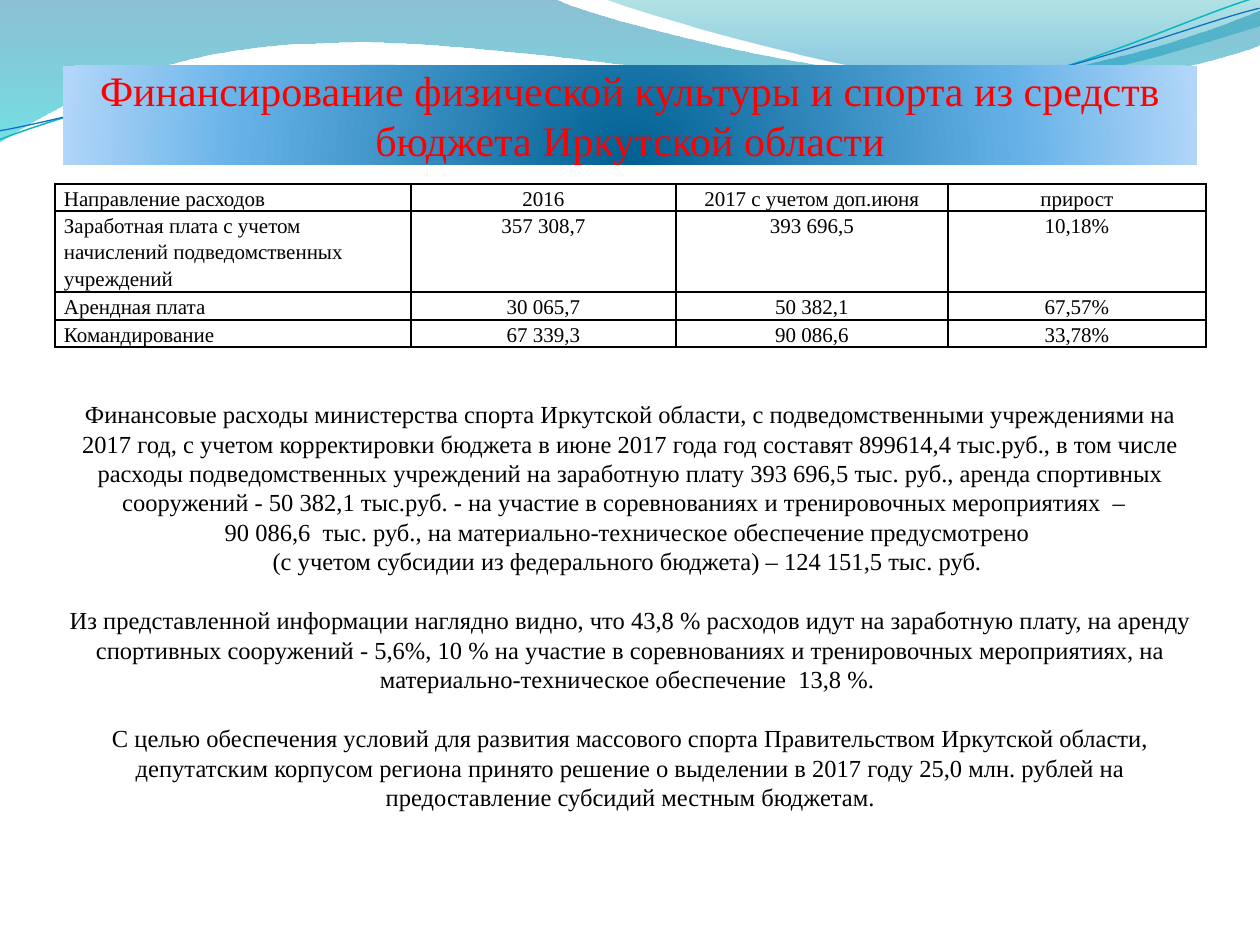
"""Build the slide on sports funding in the Irkutsk region budget."""
from lxml import etree
from pptx import Presentation
from pptx.dml.color import RGBColor
from pptx.enum.shapes import MSO_SHAPE
from pptx.enum.text import MSO_ANCHOR, MSO_AUTO_SIZE, PP_ALIGN
from pptx.oxml import parse_xml
from pptx.oxml.ns import nsdecls, qn
from pptx.util import Pt

PX = 7257
LEFT, CENTER = PP_ALIGN.LEFT, PP_ALIGN.CENTER
TOP, BOTTOM = MSO_ANCHOR.TOP, MSO_ANCHOR.BOTTOM
GROW = MSO_AUTO_SIZE.SHAPE_TO_FIT_TEXT
RECTANGLE = MSO_SHAPE.RECTANGLE
FONT = "Times New Roman"
COLORS = {
    "text": "000000", "title": "FF0000", "border": "000000",
    "wave_top": "0074A1", "wave_bottom": "00C6CF",
    "crest_top": "00A1A9", "crest_bottom": "008BBF",
    "teal_line": "0AB8BF", "blue_line": "0F6FC6",
    "banner_core": "006091", "banner_mid": "64B1E7", "banner_edge": "B1D6F9",
}
LINEAR = '<a:lin ang="5400000" scaled="0"/>'
RADIAL = ('<a:path path="circle"><a:fillToRect l="50000" t="130000" '
          'r="50000" b="-30000"/></a:path>')

WAVE = [(0, 0), (554, -1), (600, 21, 837, 79, 955, 79), (1075, 79, 1207, 33, 1260, 11),
        (1261, 45), (1239, 55, 1096, 96, 940, 95), (784, 95, 481, 35, 324, 43),
        (163, 45, 58, 105, -1, 142)]
CREST = [(604, -1), (641, 14, 859, 78, 969, 82), (1079, 87, 1211, 40, 1260, 26), (1260, 0)]
TEAL_CURVE = [(-3, 110), (58, 90, 199, 52, 349, 53), (498, 53, 745, 118, 896, 114),
              (1048, 109, 1184, 45, 1260, 27)]
BLUE_CURVE = [(-2, 101), (58, 94, 207, 57, 358, 58), (509, 58, 750, 112, 902, 108),
              (1052, 104, 1188, 52, 1262, 38)]
CURVE_TILT = 357.3

TITLE = "Финансирование физической культуры и спорта из средств бюджета Иркутской области"
EXPENSES = [
    ["Направление расходов", "2016", "2017 с учетом доп.июня", "прирост"],
    ["Заработная плата с учетом начислений подведомственных учреждений",
     "357 308,7", "393 696,5", "10,18%"],
    ["Арендная плата", "30 065,7", "50 382,1", "67,57%"],
    ["Командирование", "67 339,3", "90 086,6", "33,78%"],
]
COLUMN_WIDTHS = [356, 265, 272, 258]
ROW_HEIGHTS = [27, 81, 28, 27]
SUMMARY = [
    "Финансовые расходы министерства спорта Иркутской области, с подведомственными "
    "учреждениями на 2017 год, с учетом корректировки бюджета в июне 2017 года год составят "
    "899614,4 тыс.руб., в том числе расходы подведомственных учреждений на заработную плату "
    "393 696,5 тыс. руб., аренда спортивных сооружений - 50 382,1 тыс.руб. - на участие в "
    "соревнованиях и тренировочных мероприятиях  –  ",
    "90 086,6  тыс. руб., на материально-техническое обеспечение предусмотрено ",
    "(с учетом субсидии из федерального бюджета) – 124 151,5 тыс. руб. ",
    "Из представленной информации наглядно видно, что 43,8 % расходов идут на заработную "
    "плату, на аренду спортивных сооружений - 5,6%, 10 % на участие в соревнованиях и "
    "тренировочных мероприятиях, на материально-техническое обеспечение  13,8 %. ",
    "С целью обеспечения условий для развития массового спорта Правительством Иркутской "
    "области, депутатским корпусом региона принято решение о выделении в 2017 году 25,0 млн. "
    "рублей на предоставление субсидий местным бюджетам.",
]
SECTION_STARTS = SUMMARY[3:]


def write(paragraph, text, *, size, color="text", align=CENTER, spacing=1.0, before=0):
    """Put formatted text into a paragraph."""
    paragraph.alignment, paragraph.line_spacing = align, spacing
    paragraph.space_before = Pt(before)
    run = paragraph.add_run()
    run.text = text
    run.font.name, run.font.size = FONT, Pt(size)
    run.font.color.rgb = RGBColor.from_string(COLORS[color])


class SlideBuilder:
    """Hold the slide and draw each kind of element in its style."""

    def __init__(self, slide):
        self.slide = slide
        self.shapes = slide.shapes

    def box(self, *lengths):
        """Scale px lengths to EMU."""
        return [length * PX for length in lengths]

    def gradient(self, shape, stops, direction):
        """Fill a shape with (position, color, opacity) stops."""
        marks = "".join(
            f'<a:gs pos="{pos * 1000}"><a:srgbClr val="{COLORS[color]}">'
            f'<a:alpha val="{opacity * 1000}"/></a:srgbClr></a:gs>'
            for pos, color, opacity in stops)
        shape.fill.background()
        blank = shape._element.spPr.find(qn("a:noFill"))
        blank.getparent().replace(blank, parse_xml(
            f'<a:gradFill {nsdecls("a")} rotWithShape="1"><a:gsLst>{marks}</a:gsLst>'
            f'{direction}</a:gradFill>'))
        shape.line.fill.background()

    def outline(self, steps, closed):
        """Draw a freeform whose six-number steps are cubic curves."""
        points = [step[i:i + 2] for step in steps for i in range(0, len(step), 2)]
        builder = self.shapes.build_freeform(*points[0], scale=PX)
        builder.add_line_segments(points[1:], close=closed)
        shape = builder.convert_to_shape()
        shape.shadow.inherit = False
        segments = iter(list(shape._element.iter(qn("a:lnTo"))))
        for step in steps[1:]:
            first = next(segments)
            if len(step) == 6:
                first.tag = qn("a:cubicBezTo")
                for _ in range(2):
                    control = next(segments)
                    first.append(control[0])
                    control.getparent().remove(control)
        return shape

    def wave(self, steps, stops):
        """Draw a closed translucent wave."""
        self.gradient(self.outline(steps, True), stops, LINEAR)

    def curve(self, steps, color, width):
        """Draw an open tilted curve."""
        shape = self.outline(steps, False)
        shape.rotation = CURVE_TILT
        shape.fill.background()
        shape.line.color.rgb = RGBColor.from_string(COLORS[color])
        shape.line.width = Pt(width)

    def banner(self, text, *lengths):
        """Draw the title band."""
        band = self.shapes.add_shape(RECTANGLE, *self.box(*lengths))
        band.shadow.inherit = False
        self.gradient(band, [(0, "banner_core", 100), (68, "banner_mid", 100),
                             (100, "banner_edge", 100)], RADIAL)
        frame = band.text_frame
        frame.word_wrap, frame.vertical_anchor = True, BOTTOM
        frame.margin_left = frame.margin_right = frame.margin_bottom = 0
        write(frame.paragraphs[0], text, size=24, color="title")

    def table(self, rows, left, top):
        """Draw the bordered expense table."""
        table = self.shapes.add_table(
            len(rows), len(rows[0]),
            *self.box(left, top, sum(COLUMN_WIDTHS), sum(ROW_HEIGHTS))).table
        table.first_row = table.horz_banding = False
        for column, width in zip(table.columns, COLUMN_WIDTHS):
            column.width = width * PX
        for row, height, texts in zip(table.rows, ROW_HEIGHTS, rows):
            row.height = height * PX
            for index, (cell, text) in enumerate(zip(row.cells, texts)):
                cell.margin_left = cell.margin_right = 9 * PX
                cell.margin_top = cell.margin_bottom = 0
                cell.vertical_anchor = TOP
                write(cell.text_frame.paragraphs[0], text, size=12, spacing=1.15,
                      align=CENTER if index else LEFT)
                self.borders(cell)
                cell.fill.background()

    def borders(self, cell):
        """Rule all four sides of a cell."""
        properties = cell._tc.get_or_add_tcPr()
        for side in ("a:lnL", "a:lnR", "a:lnT", "a:lnB"):
            line = etree.SubElement(properties, qn(side), w=str(Pt(1)))
            fill = etree.SubElement(line, qn("a:solidFill"))
            etree.SubElement(fill, qn("a:srgbClr"), val=COLORS["border"])

    def prose(self, texts, *lengths):
        """Draw the centred paragraphs."""
        frame = self.shapes.add_textbox(*self.box(*lengths)).text_frame
        frame.word_wrap, frame.auto_size = True, GROW
        for index, text in enumerate(texts):
            paragraph = frame.add_paragraph() if index else frame.paragraphs[0]
            write(paragraph, text, size=14, before=17 if text in SECTION_STARTS else 0)


def main():
    """Compose and save the slide."""
    deck = Presentation()
    deck.slide_width, deck.slide_height = 1260 * PX, 945 * PX
    page = SlideBuilder(deck.slides.add_slide(deck.slide_layouts[6]))
    page.wave(WAVE, [(0, "wave_top", 45), (100, "wave_bottom", 55)])
    page.wave(CREST, [(0, "crest_top", 30), (80, "crest_bottom", 45)])
    page.curve(TEAL_CURVE, "teal_line", 0.85)
    page.curve(BLUE_CURVE, "blue_line", 0.75)
    page.banner(TITLE, 63, 66, 1134, 99)
    page.table(EXPENSES, 55, 184)
    page.prose(SUMMARY, 55, 393, 1151, 547)
    deck.save("out.pptx")


if __name__ == "__main__":
    main()
